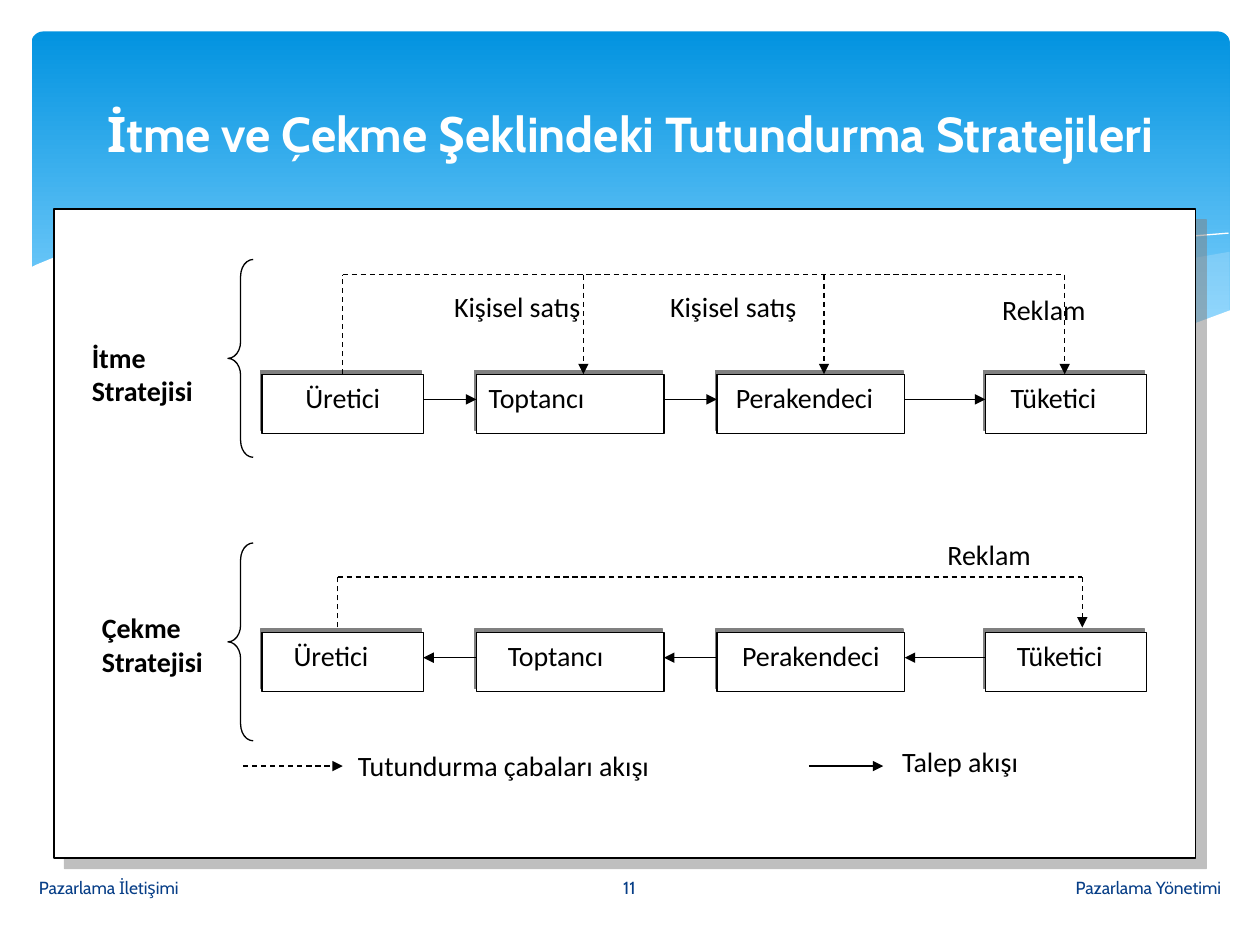
from lxml import etree
from pptx import Presentation, util as u
from pptx.dml import color
from pptx.enum import dml, shapes, text
from pptx.oxml import ns

# Grid: 100 columns by 75 rows on the slide, one cell is a tenth of an inch
CELL = u.Inches(0.1)
BLACK, WHITE, NAVY, GREY = "000000", "FFFFFF", "073E87", "808080"
LEFT, CENTER, RIGHT = text.PP_ALIGN.LEFT, text.PP_ALIGN.CENTER, text.PP_ALIGN.RIGHT
COLUMNS = ((20.8, 12.8), (37.8, 14.9), (56.9, 14.9), (78.2, 12.8))
NAMES = ("Üretici", "Toptancı", "Perakendeci", "Tüketici")

# Wave outlines, in grid cells
WHITE_WAVE = (
    (97.7, 24.6), (95, 25.6), (92, 26.5), (88.7, 27.1), (85, 27.5), (80.9, 27.7),
    (76.1, 27.5), (70.8, 27), (64.8, 26.2), (57.9, 25), (50.3, 23.3), (44.7, 22),
    (39.1, 20.7), (34, 19.7), (29.2, 19), (25, 18.6), (21.1, 18.4), (17.7, 18.4),
    (14.6, 18.5), (11.9, 18.7), (9.5, 19.1), (6.7, 19.7), (4.6, 20.3), (2.9, 21),
    (2.3, 21.3), (2.3, 32.9), (97.7, 32.9))
PALE_WAVE = (
    (97.5, 20), (93.5, 20.7), (89.1, 21.6), (83.2, 23), (77.9, 24.2), (72.9, 25.3),
    (66.1, 26.5), (70.5, 27.1), (74.5, 27.5), (79.2, 27.7), (83.5, 27.7),
    (87.2, 27.4), (90.5, 26.9), (93.5, 26.2), (96.3, 25.2), (97.6, 24.7), (97.6, 20))
THIN_WAVE = (
    (61.3, 25.7), (67.2, 24.1), (74.8, 22.3), (83.6, 20.4), (88.1, 19.6),
    (92.4, 19), (95.1, 18.7), (97.5, 18.5))


def cells(*values):
    return [u.Emu(round(value * CELL)) for value in values]


def rgb(value):
    return color.RGBColor.from_string(value)


def add_effect(shape, distance=0, angle=0, opacity=100):
    """Give the shape a grey offset shadow, or none when the distance is 0."""
    properties = shape._element.spPr
    for old in properties.findall(ns.qn("a:effectLst")):
        properties.remove(old)
    effects = etree.SubElement(properties, ns.qn("a:effectLst"))
    if distance:
        shadow = etree.SubElement(
            effects, ns.qn("a:outerShdw"), blurRad="0", dist=str(u.Pt(distance)),
            dir=str(angle * 60000), algn="ctr", rotWithShape="0")
        tint = etree.SubElement(shadow, ns.qn("a:srgbClr"), val=GREY)
        etree.SubElement(tint, ns.qn("a:alpha"), val=str(opacity * 1000))


def paint(shape, fill=None, line=None, width=0.75):
    shape.shadow.inherit = False
    if fill:
        shape.fill.solid()
        shape.fill.fore_color.rgb = rgb(fill)
    else:
        shape.fill.background()
    if line:
        shape.line.color.rgb = rgb(line)
        shape.line.width = u.Pt(width)
    else:
        shape.line.fill.background()


def write(shape, lines, size=16, font="Calibri", tint=BLACK, bold=False,
          align=LEFT, anchor=text.MSO_ANCHOR.TOP, indent=1):
    frame = shape.text_frame
    frame.word_wrap = True
    frame.auto_size = text.MSO_AUTO_SIZE.NONE
    frame.vertical_anchor = anchor
    frame.margin_left, frame.margin_top = cells(indent, 0.5)
    for index, line in enumerate(lines):
        paragraph = frame.add_paragraph() if index else frame.paragraphs[0]
        paragraph.alignment = align
        run = paragraph.add_run()
        run.text = line
        run.font.size, run.font.name, run.font.bold = u.Pt(size), font, bold
        run.font.color.rgb = rgb(tint)


def add_label(slide, box, *lines, **style):
    write(slide.shapes.add_textbox(*cells(*box)), lines, **style)


def add_line(slide, start, end, dashed=False, arrow=True):
    line = slide.shapes.add_connector(
        shapes.MSO_CONNECTOR.STRAIGHT, *cells(*start, *end))
    line.line.color.rgb = rgb(BLACK)
    line.line.width = u.Pt(0.75)
    if dashed:
        line.line.dash_style = dml.MSO_LINE.DASH
    if arrow:
        etree.SubElement(line.line._get_or_add_ln(), ns.qn("a:tailEnd"), type="triangle")
    add_effect(line)


def add_outline(slide, points, closed=True):
    # Hundredths of an inch keep the points on whole numbers
    (x, y), *rest = [(px * 10, py * 10) for px, py in points]
    builder = slide.shapes.build_freeform(x, y, scale=CELL / 10)
    builder.add_line_segments(rest, close=closed)
    return builder.convert_to_shape()


def draw_backdrop(slide, box):
    panel = slide.shapes.add_shape(shapes.MSO_SHAPE.ROUNDED_RECTANGLE, *cells(*box))
    panel.adjustments[0] = 0.034
    paint(panel)
    panel.fill.gradient()
    panel.fill.gradient_angle = 270
    for stop, place, tint in zip(panel.fill.gradient_stops, (0, 0.9), ("0293E0", "83D3FE")):
        stop.position, stop.color.rgb = place, rgb(tint)
    pale = add_outline(slide, PALE_WAVE)
    paint(pale, "C6E7FC")
    solid = pale._element.spPr.find(ns.qn("a:solidFill"))
    etree.SubElement(solid[0], ns.qn("a:alpha"), val="29000")
    paint(add_outline(slide, THIN_WAVE, closed=False), line=WHITE, width=0)
    paint(add_outline(slide, WHITE_WAVE), WHITE)


def draw_title(slide, box, wording):
    title = slide.shapes.title
    slide.shapes._spTree.append(title._element)  # in front of the backdrop
    title.left, title.top, title.width, title.height = cells(*box)
    write(title, [wording], 28, "Cabin", WHITE, True, CENTER, text.MSO_ANCHOR.MIDDLE)


def draw_footer(slide, top, height):
    parts = ((56.5, 41.4, "Pazarlama Yönetimi", RIGHT),
             (2.1, 41.4, "Pazarlama İletişimi", LEFT),
             (43.6, 12.7, "11", CENTER))
    for left, width, wording, align in parts:
        add_label(slide, (left, top, width, height), wording, size=10, font="Cabin",
                  tint=NAVY, align=align, anchor=text.MSO_ANCHOR.MIDDLE)


def draw_frame(slide, box):
    frame = slide.shapes.add_shape(shapes.MSO_SHAPE.RECTANGLE, *cells(*box))
    paint(frame, WHITE, BLACK)
    add_effect(frame, 8.5, 45, 50)


def draw_strategy(slide, top, box_row, indents, pull=False):
    """A brace, four boxes on one row and the demand arrows between them."""
    brace = slide.shapes.add_shape(
        shapes.MSO_SHAPE.LEFT_BRACE, *cells(18.1, top, 2, 15.7))
    brace.adjustments[0], brace.adjustments[1] = 0.667, 0.5
    paint(brace, line=BLACK)
    row = top + box_row
    for (left, width), name, indent in zip(COLUMNS, NAMES, indents):
        box = slide.shapes.add_shape(
            shapes.MSO_SHAPE.RECTANGLE, *cells(left, row, width, 4.7))
        paint(box, WHITE, BLACK)
        add_effect(box, 2.2, 243)
        centred = indent is None
        write(box, [name], align=CENTER if centred else LEFT,
              indent=1 if centred else indent)
    for (left, width), (following, _) in zip(COLUMNS, COLUMNS[1:]):
        ends = [(left + width, row + 2), (following, row + 2)]
        add_line(slide, *(reversed(ends) if pull else ends))


def draw_promotion(slide, source, targets, rail, foot):
    """A dashed rail from the producer, with an arrow down to each target."""
    add_line(slide, (source, foot), (source, rail), dashed=True, arrow=False)
    add_line(slide, (source, rail), (targets[-1], rail), dashed=True, arrow=False)
    for target in targets:
        add_line(slide, (target, rail), (target, foot), dashed=True)


def draw_legend(slide, row):
    add_line(slide, (19.3, row), (27.2, row), dashed=True)
    add_label(slide, (26.4, row - 1.9, 32.1, 3.9), "Tutundurma çabaları akışı", indent=2)
    add_line(slide, (64.2, row), (70.1, row))
    add_label(slide, (69.6, row - 2.2, 20.5, 3.9), "Talep akışı", indent=2)


def main():
    presentation = Presentation()
    presentation.slide_width, presentation.slide_height = cells(100, 75)
    slide = presentation.slides.add_slide(presentation.slide_layouts[5])
    draw_backdrop(slide, (2.5, 2.5, 95.1, 27))
    draw_title(slide, (5, 3.7, 90, 13.7), "İtme ve Çekme Şeklindeki Tutundurma Stratejileri")
    draw_footer(slide, 68.4, 4)
    draw_frame(slide, (4.3, 16.6, 90.6, 51.5))

    # Push strategy
    draw_strategy(slide, 20.6, 9.1, (None, 1, 1.5, 2))
    draw_promotion(slide, 27.2, (46.3, 65.4, 84.5), 21.8, 29.7)
    add_label(slide, (6.3, 26.5, 13.8, 7.9), "İtme", "Stratejisi", bold=True)
    add_label(slide, (33.2, 22.5, 15.7, 3.9), "Kişisel satış", align=CENTER)
    add_label(slide, (52.2, 22.5, 15.7, 3.9), "Kişisel satış")
    add_label(slide, (75, 22.7, 15.7, 3.9), "Reklam", align=CENTER)

    # Pull strategy
    draw_strategy(slide, 43.1, 7.1, (2.5, 2.5, 2, 2.5), pull=True)
    draw_promotion(slide, 26.8, (85.9,), 45.8, 49.8)
    add_label(slide, (7.1, 48, 11.8, 7.9), "Çekme", "Stratejisi", bold=True)
    add_label(slide, (73.2, 42.2, 15.7, 3.9), "Reklam", indent=2)

    draw_legend(slide, 60.8)
    presentation.save("out.pptx")


if __name__ == "__main__":
    main()
